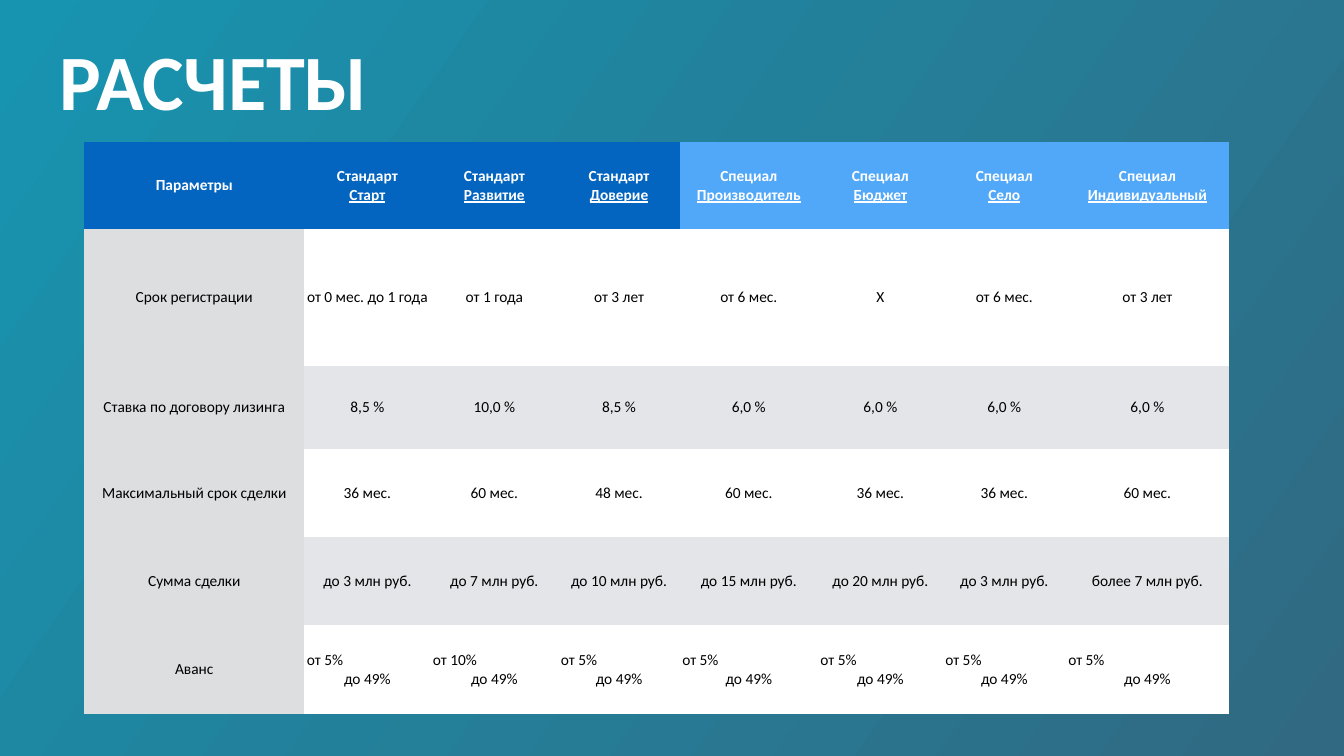
"""Build the leasing terms slide: a title and a table of tariffs on a gradient."""
from pptx import Presentation
from pptx.dml.color import RGBColor
from pptx.enum.shapes import MSO_SHAPE as Shape
from pptx.enum.text import MSO_ANCHOR as Anchor, MSO_AUTO_SIZE as AutoSize, PP_ALIGN as Align
from pptx.oxml.ns import qn
from pptx.util import Inches, Pt

NO_GRID_STYLE = "{2D5ABB26-0587-4C30-8999-92F81FD0307C}"
COLUMN_WIDTHS = [4.37, 2.5, 2.54, 2.41, 2.74, 2.48, 2.44, 3.24]
ROW_HEIGHTS = [1.73, 2.71, 1.65, 1.75, 1.75, 1.75]
TERMS = [
    ["Параметры", "Стандарт\nСтарт", "Стандарт\nРазвитие", "Стандарт\nДоверие",
     "Специал\nПроизводитель", "Специал\nБюджет", "Специал\nСело", "Специал\nИндивидуальный"],
    ["Срок регистрации", "от 0 мес. до 1 года", "от 1 года", "от 3 лет",
     "от 6 мес.", "Х", "от 6 мес.", "от 3 лет"],
    ["Ставка по договору лизинга", "8,5 %", "10,0 %", "8,5 %", "6,0 %", "6,0 %", "6,0 %", "6,0 %"],
    ["Максимальный срок сделки", "36 мес.", "60 мес.", "48 мес.",
     "60 мес.", "36 мес.", "36 мес.", "60 мес."],
    ["Сумма сделки", "до 3 млн руб.", "до 7 млн руб.", "до 10 млн руб.",
     "до 15 млн руб.", "до 20 млн руб.", "до 3 млн руб.", "более 7 млн руб."],
    ["Аванс", "от 5%\nдо 49%", "от 10%\nдо 49%"] + ["от 5%\nдо 49%"] * 5,
]


def color(value):
    return RGBColor.from_string(value)


def format_font(font, size, value, bold):
    font.name = "Calibri"
    font.size = Pt(size)
    font.bold = bold
    font.color.rgb = color(value)


prs = Presentation()
prs.slide_width, prs.slide_height = Inches(26.67), Inches(15)
slide = prs.slides.add_slide(prs.slide_layouts[5])

backdrop = slide.shapes.add_shape(Shape.RECTANGLE, 0, 0, prs.slide_width, prs.slide_height)
backdrop.shadow.inherit = False
backdrop.line.fill.background()
backdrop.fill.gradient()
backdrop.fill.gradient_angle = 325
for stop, position, value in zip(backdrop.fill.gradient_stops, [0, 1], ["1794B0", "316982"]):
    stop.position = position
    stop.color.rgb = color(value)
slide.shapes._spTree.insert(2, backdrop._element)

title = slide.shapes.title
title.left, title.top = Inches(1.1), Inches(0.35)
title.width, title.height = Inches(19.83), Inches(2.45)
heading = title.text_frame
heading.text = "РАСЧЕТЫ"
heading.auto_size = AutoSize.NONE
heading.vertical_anchor = Anchor.MIDDLE
heading.margin_left = heading.margin_right = Inches(0.08)
heading.margin_top = heading.margin_bottom = Inches(0.08)
heading.paragraphs[0].alignment = Align.LEFT
format_font(heading.paragraphs[0].runs[0].font, 112, "FFFFFF", True)

tariffs = slide.shapes.add_table(
    len(ROW_HEIGHTS), len(COLUMN_WIDTHS), Inches(1.67), Inches(2.82),
    Inches(sum(COLUMN_WIDTHS)), Inches(sum(ROW_HEIGHTS))).table
tariffs._tbl.tblPr.find(qn("a:tableStyleId")).text = NO_GRID_STYLE
for column, width in zip(tariffs.columns, COLUMN_WIDTHS):
    column.width = Inches(width)
for row, height in zip(tariffs.rows, ROW_HEIGHTS):
    row.height = Inches(height)

for r, terms in enumerate(TERMS):
    for c, term in enumerate(terms):
        is_header = r == 0
        if is_header:
            cell_fill = "0365C0" if c < 4 else "51A8F9"
        elif c == 0:
            cell_fill = "DCDEE0"
        else:
            cell_fill = "FFFFFF" if r % 2 else "E3E5E8"
        cell = tariffs.cell(r, c)
        cell.fill.solid()
        cell.fill.fore_color.rgb = color(cell_fill)
        cell.vertical_anchor = Anchor.MIDDLE
        cell.margin_left = cell.margin_right = Inches(0.05)
        cell.margin_top = cell.margin_bottom = Inches(0.05)
        cell.text_frame.text = term
        lines = cell.text_frame.paragraphs
        for i, line in enumerate(lines):
            is_lower_bound = not is_header and len(lines) == 2 and i == 0
            line.alignment = Align.LEFT if is_lower_bound else Align.CENTER
            font = line.runs[0].font
            format_font(font, 22, "FFFFFF" if is_header else "000000", is_header)
            font.underline = is_header and i == 1

prs.save("out.pptx")
